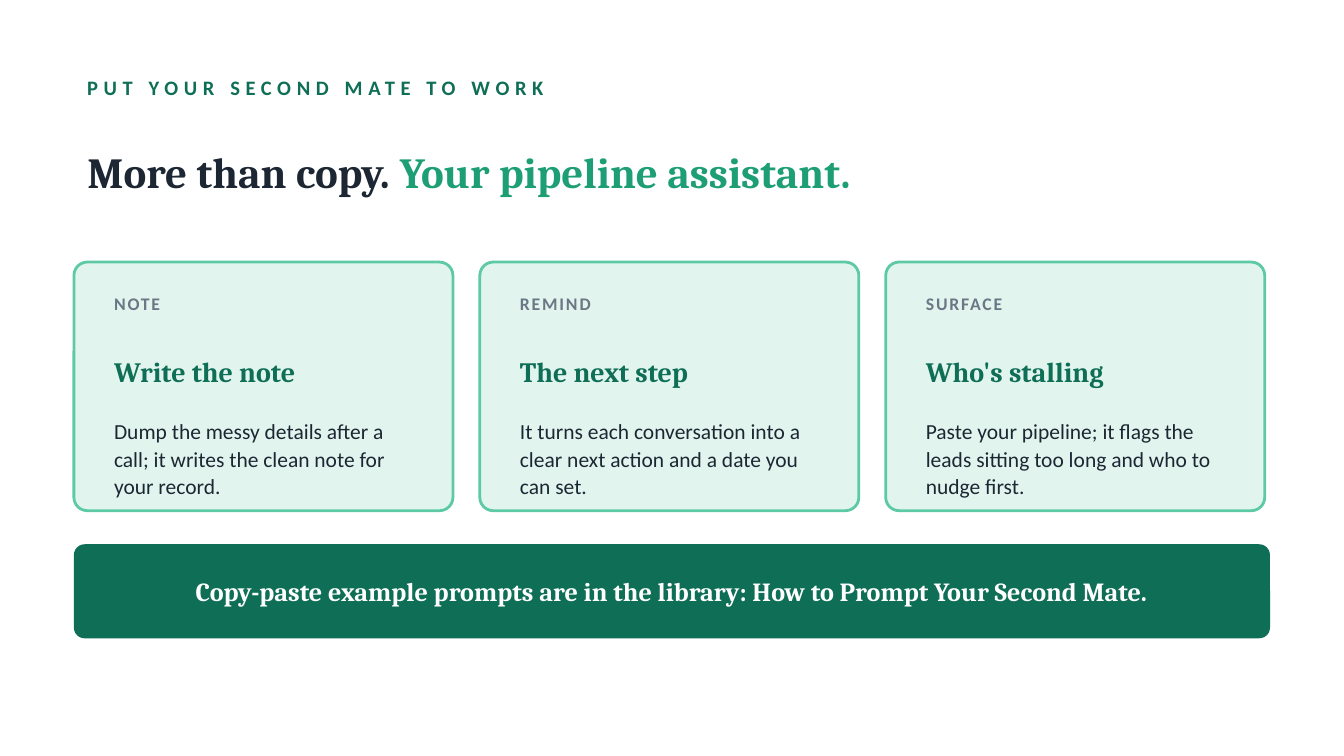
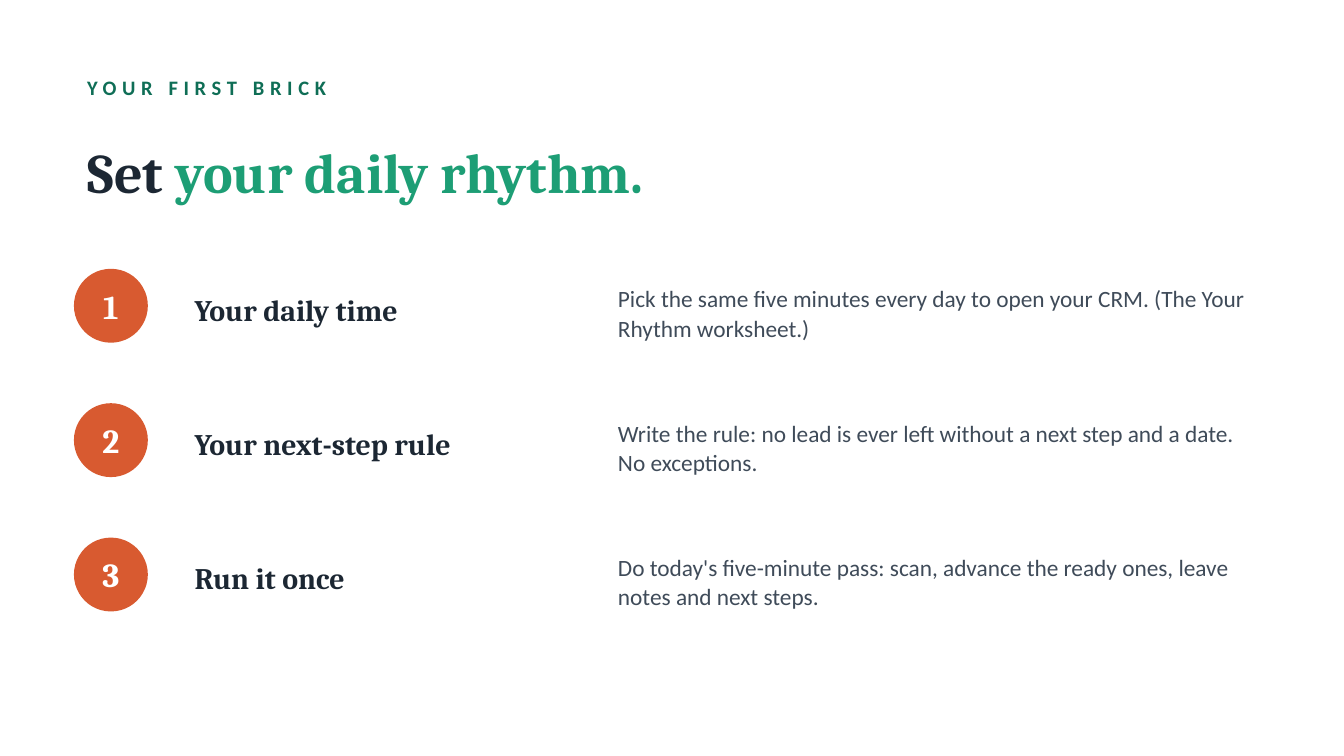
from pptx import Presentation
from pptx.dml.color import RGBColor
from pptx.enum.shapes import MSO_SHAPE
from pptx.enum.text import MSO_ANCHOR, MSO_AUTO_SIZE, PP_ALIGN
from pptx.util import Emu, Pt

ROUNDED = MSO_SHAPE.ROUNDED_RECTANGLE
OVAL = MSO_SHAPE.OVAL
MIDDLE = MSO_ANCHOR.MIDDLE
NO_FIT = MSO_AUTO_SIZE.NONE
LEFT = PP_ALIGN.LEFT
CENTER = PP_ALIGN.CENTER

EMU_PER_PX = 4572
SLIDE_SIZE = (2000, 1125)
MARGIN = 110
CONTENT_WIDTH = 1780

SERIF = "Cambria"
SANS = "Calibri"

WHITE = RGBColor(0xFF, 0xFF, 0xFF)
INK = RGBColor(0x1C, 0x27, 0x33)
SLATE = RGBColor(0x3F, 0x4B, 0x59)
GRAY = RGBColor(0x6B, 0x77, 0x85)
DEEP_GREEN = RGBColor(0x0F, 0x6E, 0x56)
GREEN = RGBColor(0x1D, 0x9E, 0x75)
MINT = RGBColor(0x5D, 0xCA, 0xA5)
PALE_MINT = RGBColor(0xE1, 0xF5, 0xEE)
ORANGE = RGBColor(0xD8, 0x5A, 0x30)

CARDS = [
    ("NOTE", "Write the note",
     "Dump the messy details after a call; it writes the clean note for your record."),
    ("REMIND", "The next step",
     "It turns each conversation into a clear next action and a date you can set."),
    ("SURFACE", "Who's stalling",
     "Paste your pipeline; it flags the leads sitting too long and who to nudge first."),
]
CARD_TOP, CARD_WIDTH, CARD_HEIGHT, CARD_PITCH = 390, 564, 370, 604

STEPS = [
    ("Your daily time",
     "Pick the same five minutes every day to open your CRM. (The Your Rhythm worksheet.)"),
    ("Your next-step rule",
     "Write the rule: no lead is ever left without a next step and a date. No exceptions."),
    ("Run it once",
     "Do today's five-minute pass: scan, advance the ready ones, leave notes and next steps."),
]
STEP_TOP, STEP_PITCH, BADGE_SIZE = 390, 200, 110


def px(*lengths):
    """Turn pixel lengths into EMU."""
    return [Emu(length * EMU_PER_PX) for length in lengths]


def write(shape, spans, size, font, bold=False, align=LEFT, line_spacing=None, tracking=0):
    """Fill a shape with one paragraph made of (text, colour) spans."""
    frame = shape.text_frame
    frame.word_wrap = True
    frame.auto_size = NO_FIT
    frame.vertical_anchor = MIDDLE
    para = frame.paragraphs[0]
    para.alignment = align
    if line_spacing:
        para.line_spacing = line_spacing
    para.font.name = font
    para.font.size = Pt(size)
    para.font.bold = bold
    for text, color in spans:
        span = para.add_run()
        span.text = text
        span.font.color.rgb = color
        if tracking:
            span.font._element.set("spc", str(tracking * 100))


def add_text(page, box, text, color, size, font, **style):
    """Add a text box in a single colour."""
    write(page.shapes.add_textbox(*px(*box)), [(text, color)], size, font, **style)


def add_panel(page, kind, box, fill, line=None, radius=None):
    """Add a flat filled shape, with an outline if a line colour is given."""
    panel = page.shapes.add_shape(kind, *px(*box))
    panel.shadow.inherit = False
    panel.fill.solid()
    panel.fill.fore_color.rgb = fill
    if line is None:
        panel.line.fill.background()
    else:
        panel.line.color.rgb = line
        panel.line.width = Pt(1.5)
    if radius is not None:
        panel.adjustments[0] = radius / min(box[2:])
    return panel


def add_page(deck, kicker, lead, accent, title_size):
    """Add a white slide with a spaced kicker and a two-colour title."""
    page = deck.slides.add_slide(deck.slide_layouts[5])
    page.background.fill.solid()
    page.background.fill.fore_color.rgb = WHITE
    title = page.shapes.title
    title.left, title.top, title.width, title.height = px(MARGIN, 170, CONTENT_WIDTH, 170)
    write(title, [(lead, INK), (accent, GREEN)], title_size, SERIF, bold=True)
    add_text(page, (MARGIN, 100, CONTENT_WIDTH, 60), kicker, DEEP_GREEN, 11, SANS,
             bold=True, tracking=3)
    return page


def add_card(page, left, label, heading, body):
    """Add a card with a label, a heading and a short text."""
    add_panel(page, ROUNDED, (left, CARD_TOP, CARD_WIDTH, CARD_HEIGHT), PALE_MINT, MINT, radius=20)
    inner, width = left + 40, 490
    add_text(page, (inner, CARD_TOP + 32, width, 60), label, GRAY, 9.5, SANS, bold=True, tracking=1)
    add_text(page, (inner, CARD_TOP + 92, width, 140), heading, DEEP_GREEN, 15, SERIF, bold=True)
    add_text(page, (inner, CARD_TOP + 236, width, 110), body, INK, 11.5, SANS, line_spacing=1.08)


def add_banner(page, text):
    """Add the full-width closing banner."""
    banner = add_panel(page, ROUNDED, (MARGIN, 810, CONTENT_WIDTH, 140), DEEP_GREEN, radius=16)
    write(banner, [(text, WHITE)], 14, SERIF, bold=True, align=CENTER)


def add_step(page, top, number, heading, body):
    """Add a numbered row with a heading and its explanation."""
    badge = add_panel(page, OVAL, (MARGIN, top + 10, BADGE_SIZE, BADGE_SIZE), ORANGE)
    badge.text_frame.margin_left = badge.text_frame.margin_right = 0
    write(badge, [(str(number), WHITE)], 18, SERIF, bold=True, align=CENTER)
    add_text(page, (270, top, 600, 140), heading, INK, 16, SERIF, bold=True)
    add_text(page, (900, top, 1000, 150), body, SLATE, 12.5, SANS, line_spacing=1.05)


def main():
    """Build both slides and save the deck."""
    deck = Presentation()
    deck.slide_width, deck.slide_height = px(*SLIDE_SIZE)

    assistant = add_page(deck, "PUT YOUR SECOND MATE TO WORK",
                         "More than copy. ", "Your pipeline assistant.", 23)
    for index, card in enumerate(CARDS):
        add_card(assistant, MARGIN + index * CARD_PITCH, *card)
    add_banner(assistant,
               "Copy-paste example prompts are in the library: How to Prompt Your Second Mate.")

    rhythm = add_page(deck, "YOUR FIRST BRICK", "Set ", "your daily rhythm.", 30)
    for index, step in enumerate(STEPS):
        add_step(rhythm, STEP_TOP + index * STEP_PITCH, index + 1, *step)

    deck.save("out.pptx")


if __name__ == "__main__":
    main()
